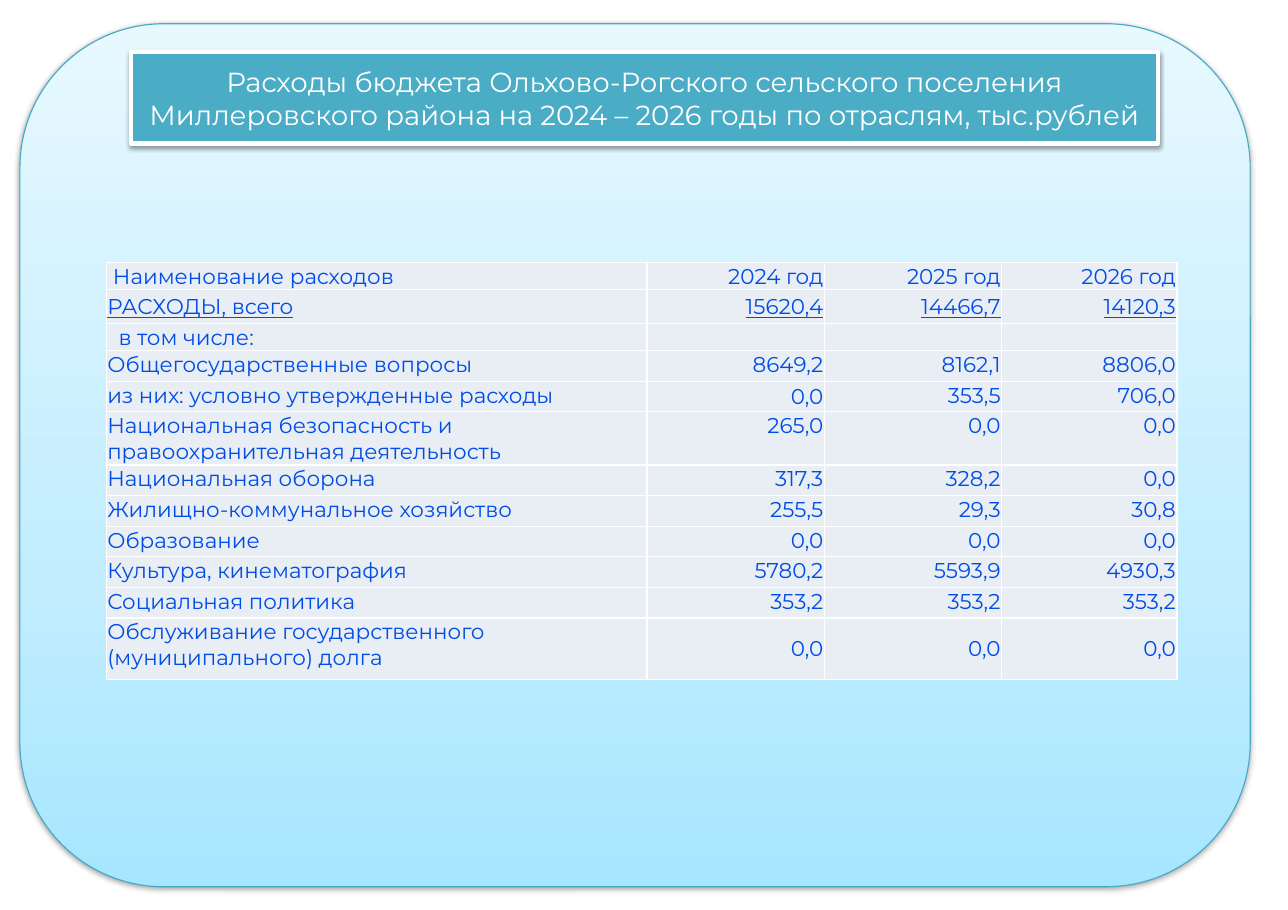
from dataclasses import dataclass

from lxml import etree
from pptx import Presentation
from pptx import util as u
from pptx.dml.color import RGBColor
from pptx.enum import shapes, text
from pptx.oxml import ns, parse_xml

Pt = u.Pt
COLORS = {"white": "FFFFFF", "teal": "4BACC6", "edge": "46AAC5", "cell": "E9EDF4",
          "text": "004DE6", "sky": "A7E6FF", "mid": "C1EDFF", "pale": "E7F8FF"}
FONT = "Montserrat"
ANCHORS = {"t": text.MSO_ANCHOR.TOP, "m": text.MSO_ANCHOR.MIDDLE}
RIGHT, LEFT, CENTER = text.PP_ALIGN.RIGHT, text.PP_ALIGN.LEFT, text.PP_ALIGN.CENTER
XMLNS = f'xmlns:a="{ns.nsuri("a")}"'


@dataclass
class Panel:
    kind: int
    box: tuple[float, float, float, float]
    line: str
    line_width: float


@dataclass
class Row:
    height: float
    name: str
    values: tuple[str, ...]
    anchors: str = "tttt"
    indent: float = 0
    underline: bool = False


def rgb(name: str) -> RGBColor:
    return RGBColor.from_string(COLORS[name])


def add_panel(slide, panel: Panel):
    sp = slide.shapes.add_shape(panel.kind, *map(Pt, panel.box))
    sp.line.color.rgb = rgb(panel.line)
    sp.line.width = Pt(panel.line_width)
    # Soft shadow falling straight down
    sp.shadow.inherit = False
    effects = sp._element.spPr.find(ns.qn("a:effectLst"))
    effects.append(parse_xml(
        f'<a:outerShdw {XMLNS} blurRad="{Pt(3.1)}" dist="{Pt(1.6)}" dir="5400000" rotWithShape="0">'
        '<a:srgbClr val="000000"><a:alpha val="38000"/></a:srgbClr></a:outerShdw>'))
    return sp


def fill_gradient(sp, stops: dict[int, str], angle: int) -> None:
    sp.fill.gradient()
    sp.fill.gradient_angle = 360 - angle
    stop_list = sp._element.spPr.find(ns.qn("a:gradFill")).find(ns.qn("a:gsLst"))
    for old in list(stop_list):
        stop_list.remove(old)
    for pos, color in stops.items():
        stop_list.append(parse_xml(f'<a:gs {XMLNS} pos="{pos * 1000}">'
                                   f'<a:srgbClr val="{COLORS[color]}"/></a:gs>'))


def write(p, content: str, size: float, color: str, align, underline: bool = False) -> None:
    p.alignment = align
    if not content:
        etree.SubElement(p._p, ns.qn("a:endParaRPr"), sz=str(int(size * 100)))
        return
    r = p.add_run()
    r.text = content
    r.font.color.rgb = rgb(color)
    for key, value in {"name": FONT, "size": Pt(size), "underline": underline}.items():
        setattr(r.font, key, value)


def add_borders(cell, color: str, width: float) -> None:
    tc_pr = cell._tc.get_or_add_tcPr()
    for i, side in enumerate(("lnL", "lnR", "lnT", "lnB")):
        tc_pr.insert(i, parse_xml(f'<a:{side} {XMLNS} w="{Pt(width)}"><a:solidFill>'
                                  f'<a:srgbClr val="{COLORS[color]}"/></a:solidFill></a:{side}>'))


def fill_cell(cell, content: str, row: Row, col: int) -> None:
    cell.fill.solid()
    cell.fill.fore_color.rgb = rgb("cell")
    add_borders(cell, "white", 1)
    layout = {"margin_left": Pt(0.72 + (0 if col else row.indent)), "margin_right": Pt(0.72),
              "margin_top": Pt(0.72), "margin_bottom": 0,
              "vertical_anchor": ANCHORS[row.anchors[col]]}
    for key, value in layout.items():
        setattr(cell, key, value)
    write(cell.text_frame.paragraphs[0], content, 14, "text",
          RIGHT if col else LEFT, row.underline)


def add_budget_table(slide, left: float, top: float, widths: list[float], rows: list[Row]) -> None:
    height = sum(row.height for row in rows)
    table = slide.shapes.add_table(len(rows), len(widths), Pt(left), Pt(top),
                                   Pt(sum(widths)), Pt(height)).table
    table.first_row = table.horz_banding = False
    for column, width in zip(table.columns, widths):
        column.width = Pt(width)
    for i, row in enumerate(rows):
        table.rows[i].height = Pt(row.height)
        for col, content in enumerate((row.name, *row.values)):
            fill_cell(table.cell(i, col), content, row, col)


ROWS = [
    Row(18, "Наименование расходов", ("2024 год", "2025 год", "2026 год"), "tmmm", indent=3.7),
    Row(22, "РАСХОДЫ, всего", ("15620,4", "14466,7", "14120,3"), "mmmm", underline=True),
    Row(17.8, "в том числе:", ("", "", ""), "mttt", indent=7.4),
    Row(20, "Общегосударственные вопросы", ("8649,2", "8162,1", "8806,0")),
    Row(20, "из них: условно утвержденные расходы", ("0,0", "353,5", "706,0"), "tmtt"),
    Row(34.8, "Национальная безопасность и правоохранительная деятельность",
        ("265,0", "0,0", "0,0")),
    Row(20, "Национальная оборона", ("317,3", "328,2", "0,0")),
    Row(20, "Жилищно-коммунальное хозяйство", ("255,5", "29,3", "30,8")),
    Row(20, "Образование", ("0,0", "0,0", "0,0")),
    Row(20, "Культура, кинематография", ("5780,2", "5593,9", "4930,3")),
    Row(20, "Социальная политика", ("353,2", "353,2", "353,2")),
    Row(40, "Обслуживание государственного (муниципального) долга",
        ("0,0", "0,0", "0,0"), "tmmm"),
]


def main() -> None:
    prs = Presentation()
    prs.slide_width, prs.slide_height = Pt(841.68), Pt(594.72)
    slide = prs.slides.add_slide(prs.slide_layouts[6])

    # Rounded backdrop
    backdrop = add_panel(slide, Panel(shapes.MSO_SHAPE.ROUNDED_RECTANGLE,
                                      (13, 15.5, 804, 564), "edge", 0.75))
    fill_gradient(backdrop, {0: "sky", 35: "mid", 100: "pale"}, 270)

    # Title banner
    banner = add_panel(slide, Panel(shapes.MSO_SHAPE.RECTANGLE,
                                    (85.7, 34, 671, 59.8), "white", 3))
    banner.fill.solid()
    banner.fill.fore_color.rgb = rgb("teal")
    tf = banner.text_frame
    tf.word_wrap = True
    tf.vertical_anchor = ANCHORS["m"]
    write(tf.paragraphs[0], "Расходы бюджета Ольхово-Рогского сельского поселения Миллеровского "
          "района на 2024 – 2026 годы по отраслям, тыс.рублей", 18, "white", CENTER)

    # Spending by sector
    add_budget_table(slide, 69.4, 171.4, [353.5, 115.9, 115.9, 114.5], ROWS)
    prs.save("out.pptx")


if __name__ == "__main__":
    main()
